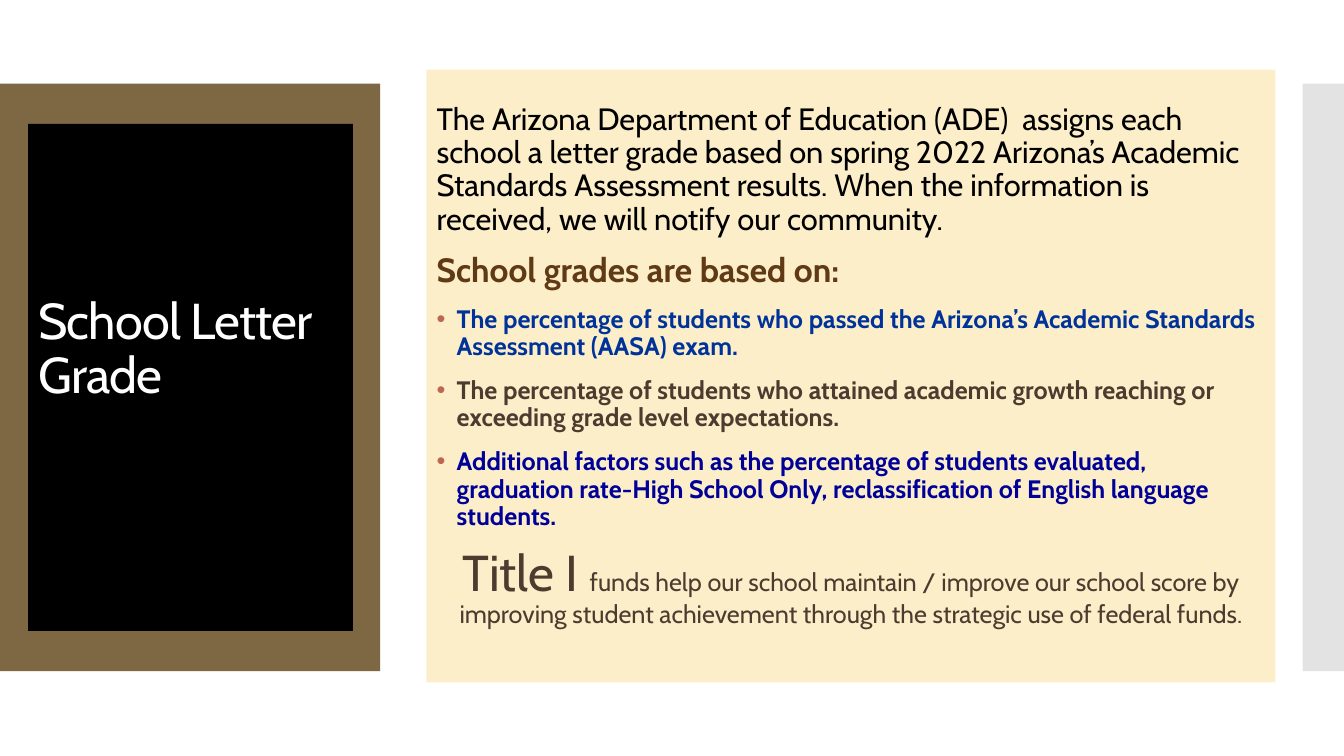
from dataclasses import dataclass

from lxml import etree
from pptx import Presentation, util as u
from pptx.dml.color import RGBColor
from pptx.enum import shapes, text
from pptx.oxml import ns

PX = 9144  # EMU per px, 100 px to the inch


@dataclass(frozen=True)
class Theme:
    font: str = "Cabin"
    white: str = "FFFFFF"
    black: str = "000000"
    frame: str = "7E6743"
    cream: str = "FBEEC9"
    edge: str = "C8C8C8"
    bullet: str = "BC6752"
    heading: str = "603A14"
    blue: str = "003399"
    brown: str = "4E3B30"
    navy: str = "000099"
    display_size: int = 36
    heading_size: int = 24
    intro_size: int = 22
    list_size: int = 18
    space_before: int = 12
    line_spacing: float = 0.9


THEME = Theme()

INTRO = (
    "The Arizona Department of Education (ADE)  assigns each school a letter grade "
    "based on spring 2022 Arizona’s Academic Standards Assessment results. "
    "When the information is received, we will notify our community."
)
CRITERIA = [
    ("The percentage of students who passed the Arizona’s Academic Standards "
     "Assessment (AASA) exam.", THEME.blue),
    ("The percentage of students who attained academic growth reaching or "
     "exceeding grade level expectations.", THEME.brown),
    ("Additional factors such as the percentage of students evaluated, graduation "
     "rate-High School Only, reclassification of English language students.", THEME.navy),
]
FUNDING = (
    "funds help our school maintain / improve our school score by improving "
    "student achievement through the strategic use of federal funds."
)


def px(length):
    return u.Emu(length * PX)


def paint(shape, color):
    shape.fill.solid()
    shape.fill.fore_color.rgb = RGBColor.from_string(color)
    shape.line.fill.background()


def add_panel(slide, box, color):
    panel = slide.shapes.add_shape(shapes.MSO_SHAPE.RECTANGLE, *map(px, box))
    panel.shadow.inherit = False
    paint(panel, color)
    return panel


def set_alpha(shape, percent):
    color = shape.fill._xPr.find(".//" + ns.qn("a:srgbClr"))
    etree.SubElement(color, ns.qn("a:alpha"), val=str(percent * 1000))


def place(holder, box, color, top, bottom):
    """Move and fill a placeholder; top and bottom are its text insets."""
    holder.left, holder.top, holder.width, holder.height = map(px, box)
    paint(holder, color)
    frame = holder.text_frame
    frame.word_wrap = True
    frame.auto_size = text.MSO_AUTO_SIZE.NONE
    frame.vertical_anchor = text.MSO_ANCHOR.MIDDLE
    frame.margin_left = frame.margin_right = px(10)
    frame.margin_top, frame.margin_bottom = px(top), px(bottom)
    return frame


def add_paragraph(frame, runs, bullet=False, align=text.PP_ALIGN.LEFT):
    """Add one paragraph; runs are (words, size, color, bold)."""
    first = not frame.paragraphs[0].runs
    paragraph = frame.paragraphs[0] if first else frame.add_paragraph()
    props = paragraph._p.get_or_add_pPr()
    indent = px(20) if bullet else 0
    props.set("marL", str(indent))
    props.set("indent", str(-indent))
    if bullet:
        tint = etree.SubElement(props, ns.qn("a:buClr"))
        etree.SubElement(tint, ns.qn("a:srgbClr"), val=THEME.bullet)
        etree.SubElement(props, ns.qn("a:buFont"), typeface="Arial")
        etree.SubElement(props, ns.qn("a:buChar"), char="•")
    else:
        etree.SubElement(props, ns.qn("a:buNone"))
    paragraph.alignment = align
    paragraph.line_spacing = THEME.line_spacing
    paragraph.space_before = u.Pt(0 if first else THEME.space_before)
    for words, size, color, bold in runs:
        run = paragraph.add_run()
        run.text = words
        run.font.name = THEME.font
        run.font.size = u.Pt(size)
        run.font.bold = bold
        run.font.color.rgb = RGBColor.from_string(color)
    return paragraph


def main():
    deck = Presentation()
    deck.slide_width, deck.slide_height = u.Inches(13.33), u.Inches(7.5)
    slide = deck.slides.add_slide(deck.slide_layouts[1])
    heading, content = slide.placeholders

    # Brown frame, behind the title
    title_frame = add_panel(slide, (0, 83, 377, 583), THEME.frame)
    heading._element.addprevious(title_frame._element)

    # Title
    title = place(heading, (28, 123, 322, 503), THEME.black, 5, 59)
    title_line = add_paragraph(
        title, [("School Letter Grade", THEME.display_size, THEME.white, False)])
    title_line.runs[0].font._element.set("spc", "-60")

    # Grading criteria
    body = place(content, (423, 69, 842, 608), THEME.cream, 22, 41)
    add_paragraph(body, [(INTRO, THEME.intro_size, THEME.black, False)])
    add_paragraph(
        body, [("School grades are based on:", THEME.heading_size, THEME.heading, True)])
    for criterion, color in CRITERIA:
        add_paragraph(body, [(criterion, THEME.list_size, color, True)], bullet=True)

    # Funding note
    add_paragraph(
        body,
        [("Title I ", THEME.display_size, THEME.brown, False),
         (FUNDING, THEME.list_size, THEME.brown, False)],
        align=text.PP_ALIGN.CENTER)

    # Translucent strip at the right edge
    edge_strip = add_panel(slide, (1292, 83, 41, 583), THEME.edge)
    set_alpha(edge_strip, 50)

    deck.save("out.pptx")


if __name__ == "__main__":
    main()
